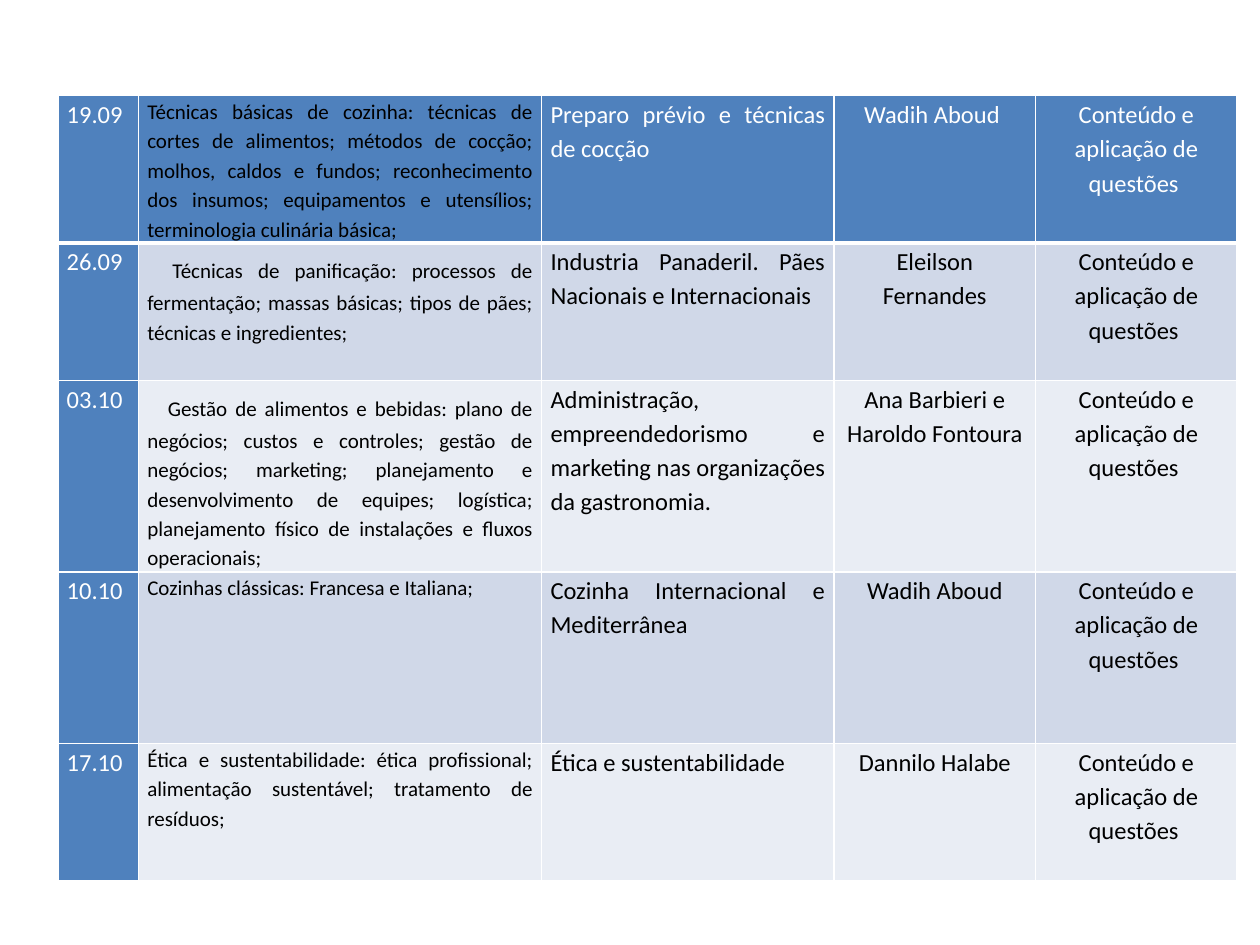
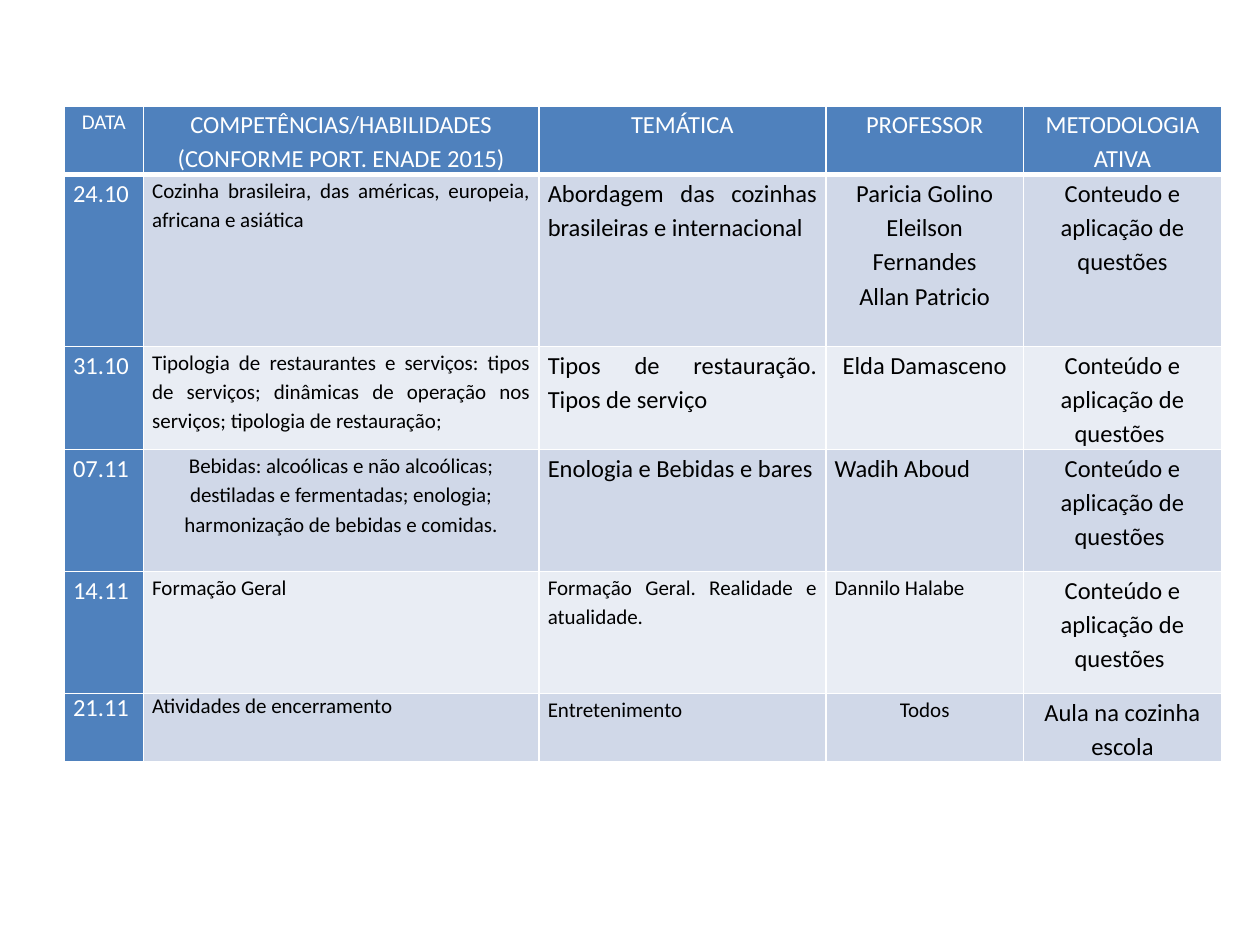
"""Build two slides with the class schedule of a gastronomy course."""
from dataclasses import dataclass
from typing import NamedTuple, Optional, Union

from lxml.etree import SubElement
from pptx import Presentation
from pptx.dml.color import RGBColor
from pptx.enum.text import PP_ALIGN
from pptx.oxml.ns import qn
from pptx.util import Inches, Pt

WHITE = RGBColor(0xFF, 0xFF, 0xFF)
BLACK = RGBColor(0x00, 0x00, 0x00)
HEADING_BLUE = RGBColor(0x4F, 0x81, 0xBD)
BANDS = (RGBColor(0xE9, 0xED, 0xF4), RGBColor(0xD0, 0xD8, 0xE8))

FONT = "Calibri"
LARGE, SMALL, LEAD_SIZE = 14, 12, 18
LINE_SPACING = 1.15
TEXT_LINE = Pt(LARGE * 1.22 * LINE_SPACING)
SIDE_MARGIN = Inches(0.07)
THIN, THICK = 1, 3
SLIDE_WIDTH, SLIDE_HEIGHT = Inches(10), Inches(7.5)


class Column(NamedTuple):
    units: float
    align: PP_ALIGN
    size: int


COLUMNS = (
    Column(4, PP_ALIGN.LEFT, LARGE),
    Column(20, PP_ALIGN.JUSTIFY, SMALL),
    Column(14.5, PP_ALIGN.JUSTIFY, LARGE),
    Column(10, PP_ALIGN.CENTER, LARGE),
    Column(10, PP_ALIGN.CENTER, LARGE),
)


@dataclass(frozen=True)
class Entry:
    text: str
    size: Optional[int] = None
    align: Optional[PP_ALIGN] = None
    color: Optional[RGBColor] = None
    spacing: Optional[float] = LINE_SPACING
    lead: str = ""
    indent: float = 0


class Lesson(NamedTuple):
    lines: float
    entries: tuple[Union[str, Entry], ...]


class Schedule(NamedTuple):
    left: float
    top: float
    unit: float
    lessons: tuple[Lesson, ...]


METHOD = "Conteúdo e aplicação de questões "

SEPTEMBER = Schedule(0.46, 0.76, 0.16, (
    Lesson(4.25, (
        "19.09",
        Entry("Técnicas básicas de cozinha: técnicas de cortes de alimentos; métodos de "
              "cocção; molhos, caldos e fundos; reconhecimento dos insumos; equipamentos "
              "e utensílios; terminologia culinária básica;", color=BLACK),
        "Preparo prévio e técnicas de cocção", "Wadih Aboud ", METHOD)),
    Lesson(4, (
        "26.09",
        Entry("Técnicas de panificação: processos de fermentação; massas básicas; tipos "
              "de pães; técnicas e ingredientes;", lead=" ", indent=0.06),
        "Industria Panaderil. Pães Nacionais e Internacionais",
        "Eleilson Fernandes", METHOD)),
    Lesson(5.57, (
        "03.10",
        Entry("Gestão de alimentos e bebidas: plano de negócios; custos e controles; "
              "gestão de negócios; marketing; planejamento e desenvolvimento de equipes; "
              "logística; planejamento físico de instalações e fluxos operacionais;",
              lead=" ", indent=0.08),
        "Administração, empreendedorismo e marketing nas organizações da gastronomia.",
        "Ana Barbieri e Haroldo Fontoura", METHOD)),
    Lesson(5, (
        "10.10", "Cozinhas clássicas: Francesa e Italiana;",
        "Cozinha Internacional e Mediterrânea", "Wadih Aboud", METHOD)),
    Lesson(4, (
        "17.10",
        "Ética e sustentabilidade: ética profissional; alimentação sustentável; "
        "tratamento de resíduos;",
        "Ética e sustentabilidade", "Dannilo Halabe", METHOD)),
))

OCTOBER = Schedule(0.51, 0.84, 0.157, (
    Lesson(2, (
        Entry("DATA", SMALL, PP_ALIGN.CENTER),
        Entry("COMPETÊNCIAS/HABILIDADES\n(CONFORME PORT. ENADE 2015)",
              LARGE, PP_ALIGN.CENTER),
        Entry("TEMÁTICA", align=PP_ALIGN.CENTER), "PROFESSOR", "METODOLOGIA ATIVA")),
    Lesson(5, (
        "24.10", "Cozinha brasileira, das américas, europeia, africana e asiática",
        "Abordagem das cozinhas brasileiras e internacional",
        "Paricia Golino\nEleilson Fernandes\nAllan Patricio",
        "Conteudo e aplicação de questões")),
    Lesson(3, (
        "31.10",
        "Tipologia de restaurantes e serviços: tipos de serviços; dinâmicas de operação "
        "nos serviços; tipologia de restauração;",
        "Tipos de restauração. Tipos de serviço", "Elda Damasceno", METHOD)),
    Lesson(3.55, (
        "07.11",
        Entry("Bebidas: alcoólicas e não alcoólicas; destiladas e fermentadas; enologia; "
              "harmonização de bebidas e comidas.", align=PP_ALIGN.CENTER),
        "Enologia e Bebidas e bares",
        Entry("Wadih Aboud", align=PP_ALIGN.JUSTIFY), METHOD)),
    Lesson(3.55, (
        "14.11", "Formação Geral",
        Entry("Formação Geral. Realidade e atualidade.", SMALL),
        Entry("Dannilo Halabe", SMALL, PP_ALIGN.JUSTIFY), METHOD)),
    Lesson(2, (
        Entry("21.11", spacing=None),
        Entry("Atividades de encerramento", align=PP_ALIGN.LEFT, spacing=None),
        Entry("Entretenimento", SMALL, PP_ALIGN.LEFT),
        Entry("Todos", SMALL), "Aula na cozinha escola")),
))


def draw_borders(cell, bottom: int) -> None:
    """Line the four sides of a cell in white, below its fill in paint order."""
    properties = cell._tc.get_or_add_tcPr()
    sides = (("a:lnL", THIN), ("a:lnR", THIN), ("a:lnT", THIN), ("a:lnB", bottom))
    for position, (side, width) in enumerate(sides):
        line = SubElement(properties, qn(side), w=str(Pt(width)))
        SubElement(SubElement(line, qn("a:solidFill")), qn("a:srgbClr"), val=str(WHITE))
        properties.insert(position, line)


def write_entry(cell, entry: Entry, column: Column, color: RGBColor) -> None:
    """Write an entry, one paragraph per line, over the column's defaults."""
    frame = cell.text_frame
    for number, line in enumerate(entry.text.split("\n")):
        paragraph = frame.add_paragraph() if number else frame.paragraphs[0]
        paragraph.alignment = entry.align or column.align
        if entry.spacing:
            paragraph.line_spacing = entry.spacing
        paragraph.font.name = FONT
        paragraph.font.size = Pt(entry.size or column.size)
        paragraph.font.color.rgb = entry.color or color
        if entry.lead:
            paragraph._p.get_or_add_pPr().set("indent", str(Inches(entry.indent)))
            lead = paragraph.add_run()
            lead.text = entry.lead
            lead.font.size = Pt(LEAD_SIZE)
        paragraph.add_run().text = line


def draw_schedule(slide, schedule: Schedule) -> None:
    """Draw a schedule as a table with blue headings and banded lessons."""
    widths = [Inches(column.units * schedule.unit) for column in COLUMNS]
    heights = [int(lesson.lines * TEXT_LINE) for lesson in schedule.lessons]
    table = slide.shapes.add_table(
        len(heights), len(widths), Inches(schedule.left), Inches(schedule.top),
        sum(widths), sum(heights)).table
    table.first_row = table.horz_banding = False
    for table_column, width in zip(table.columns, widths):
        table_column.width = width
    for row, lesson in enumerate(schedule.lessons):
        table.rows[row].height = heights[row]
        for col, (column, content) in enumerate(zip(COLUMNS, lesson.entries)):
            cell = table.cell(row, col)
            is_heading = row == 0 or col == 0
            cell.margin_left = cell.margin_right = SIDE_MARGIN
            cell.margin_top = cell.margin_bottom = 0
            cell.fill.solid()
            cell.fill.fore_color.rgb = HEADING_BLUE if is_heading else BANDS[row % 2]
            draw_borders(cell, THIN if row else THICK)
            entry = content if isinstance(content, Entry) else Entry(content)
            write_entry(cell, entry, column, WHITE if is_heading else BLACK)


def main() -> None:
    """Build and save the presentation."""
    deck = Presentation()
    deck.slide_width, deck.slide_height = SLIDE_WIDTH, SLIDE_HEIGHT
    for schedule in (SEPTEMBER, OCTOBER):
        draw_schedule(deck.slides.add_slide(deck.slide_layouts[6]), schedule)
    deck.save("out.pptx")


if __name__ == "__main__":
    main()
